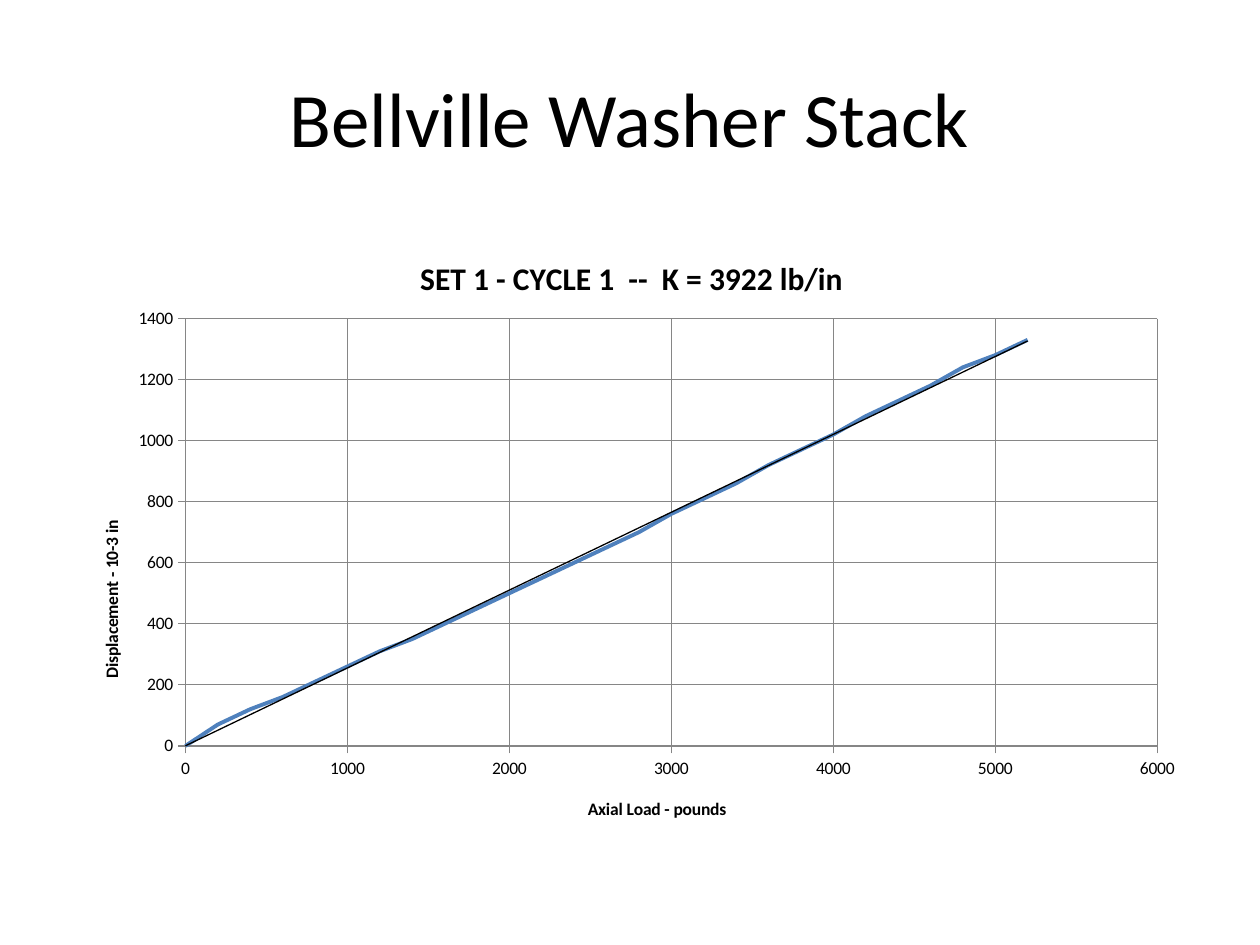
from pptx import Presentation
from pptx.chart.data import XyChartData
from pptx.dml.color import RGBColor
from pptx.enum.chart import XL_CHART_TYPE as ChartType, XL_TICK_MARK as Tick
from pptx.enum.text import MSO_ANCHOR as Anchor, PP_ALIGN as Align
from pptx.oxml import parse_xml
from pptx.oxml.ns import nsdecls
from pptx.util import Emu, Pt

PX_PER_INCH = 126
BLACK = RGBColor(0x00, 0x00, 0x00)
GRAY = RGBColor(0x86, 0x86, 0x86)
BLUE = RGBColor(0x4F, 0x81, 0xBD)

LOAD_STEP = 200
DISPLACEMENTS = [
    0, 70, 120, 160, 210, 260, 310, 350, 400, 450, 500, 550, 600, 650,
    700, 760, 810, 860, 920, 970, 1020, 1080, 1130, 1180, 1240, 1280, 1330,
]


def px(length):
    return Emu(round(length * 914400 / PX_PER_INCH))


class SlideBuilder:
    """Holds the style and the current page."""

    font = "Calibri"

    def __init__(self, page):
        self.page = page

    def add_span(self, para, text, size, bold=False):
        span = para.add_run()
        span.text = text
        span.font.name = self.font
        span.font.size = Pt(size)
        span.font.bold = bold
        span.font.color.rgb = BLACK

    def add_heading(self, text, left, top, width, height):
        box = self.page.shapes.add_textbox(px(left), px(top), px(width), px(height))
        frame = box.text_frame
        frame.word_wrap = True
        frame.vertical_anchor = Anchor.MIDDLE
        para = frame.paragraphs[0]
        para.alignment = Align.CENTER
        self.add_span(para, text, 44)

    def layout(self, x, y, width=None, height=None):
        """Make a manual layout in fractions of the chart frame."""
        inner = '<c:layoutTarget val="inner"/>' if width else ""
        size = f'<c:w val="{width}"/><c:h val="{height}"/>' if width else ""
        return parse_xml(
            f'<c:layout {nsdecls("c")}><c:manualLayout>{inner}'
            '<c:xMode val="edge"/><c:yMode val="edge"/>'
            f'<c:x val="{x}"/><c:y val="{y}"/>{size}'
            "</c:manualLayout></c:layout>"
        )

    def set_title(self, title, text, size, x, y, upright=False):
        self.add_span(title.text_frame.paragraphs[0], text, size, bold=True)
        if upright:
            title.element.xpath(".//a:bodyPr")[0].set("rot", "-5400000")
        for old in title.element.xpath("./c:layout"):
            title.element.remove(old)
        title.element.xpath("./c:tx")[0].addnext(self.layout(x, y))

    def style_axis(self, axis, maximum, step):
        axis.minimum_scale = 0
        axis.maximum_scale = maximum
        axis.major_unit = step
        axis.major_tick_mark = Tick.CROSS
        axis.minor_tick_mark = Tick.NONE
        axis.has_major_gridlines = True
        for part in (axis, axis.major_gridlines):
            part.format.line.color.rgb = GRAY
            part.format.line.width = Pt(0.75)

    def add_trend(self, series_element):
        trend = parse_xml(
            f'<c:trendline {nsdecls("c", "a")}><c:spPr><a:ln w="9525"><a:solidFill>'
            f'<a:srgbClr val="{BLACK}"/></a:solidFill></a:ln></c:spPr>'
            '<c:trendlineType val="linear"/><c:dispRSqr val="0"/>'
            '<c:dispEq val="0"/></c:trendline>'
        )
        series_element.xpath("./c:xVal")[0].addprevious(trend)

    def add_load_chart(self, left, top, width, height):
        data = XyChartData()
        points = data.add_series("Series 1")
        for index, displacement in enumerate(DISPLACEMENTS):
            points.add_data_point(index * LOAD_STEP, displacement)
        chart = self.page.shapes.add_chart(
            ChartType.XY_SCATTER_SMOOTH_NO_MARKERS,
            px(left), px(top), px(width), px(height), data,
        ).chart
        chart.has_legend = False
        chart.font.name = self.font
        chart.font.size = Pt(10)
        chart.font.color.rgb = BLACK

        # Plot area
        plot_area = chart.element.xpath(".//c:plotArea")[0]
        for old in plot_area.xpath("./c:layout"):
            plot_area.remove(old)
        plot_area.insert(0, self.layout(0.108, 0.158, 0.857, 0.685))

        # Axes and titles
        self.style_axis(chart.category_axis, 6000, 1000)
        self.style_axis(chart.value_axis, 1400, 200)
        self.set_title(chart.chart_title, "SET 1 - CYCLE 1  --  K = 3922 lb/in",
                       18, 0.31, 0.05)
        self.set_title(chart.category_axis.axis_title, "Axial Load - pounds",
                       10, 0.46, 0.92)
        self.set_title(chart.value_axis.axis_title, "Displacement - 10-3 in ",
                       10, 0.03, 0.47, upright=True)

        # Measured curve and its linear trend
        plot = chart.plots[0]
        plot.vary_by_categories = False
        curve = plot.series[0]
        curve.smooth = True
        curve.format.line.color.rgb = BLUE
        curve.format.line.width = Pt(2.25)
        self.add_trend(plot_area.xpath(".//c:ser")[0])


def main():
    deck = Presentation()
    deck.slide_width = px(1260)
    deck.slide_height = px(945)
    builder = SlideBuilder(deck.slides.add_slide(deck.slide_layouts[6]))
    builder.add_heading("Bellville Washer Stack", 63, 38, 1134, 158)
    builder.add_load_chart(63, 220, 1134, 624)
    deck.save("out.pptx")


if __name__ == "__main__":
    main()
